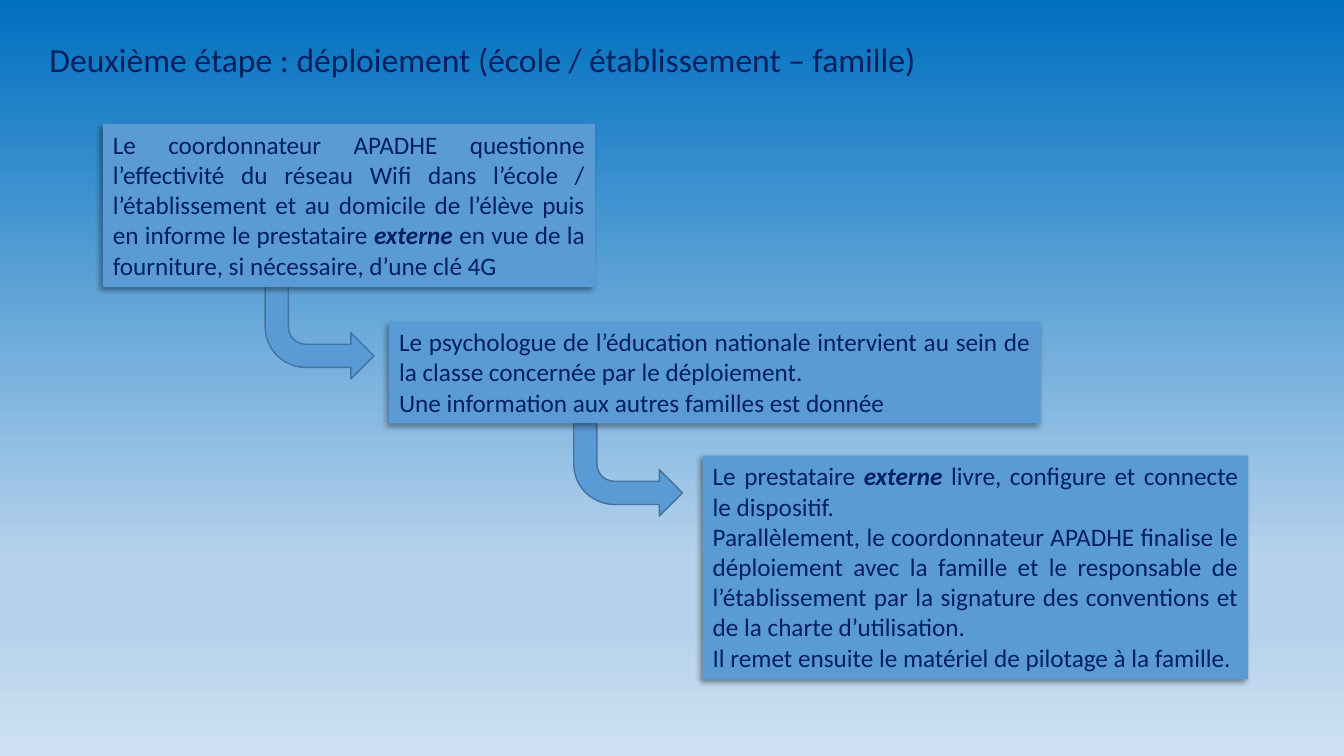
import copy
import lxml.etree
import pptx
import pptx.dml.color
import pptx.enum.shapes
import pptx.enum.text
import pptx.oxml
import pptx.oxml.ns
import pptx.util

Inches = pptx.util.Inches
Pt = pptx.util.Pt
qn = pptx.oxml.ns.qn
NAVY, BLUE, OUTLINE = "002060", "5B9BD5", "43739E"


def color(hex_value):
    return pptx.dml.color.RGBColor.from_string(hex_value)


def outer_shadow(blur, distance, angle, alpha):
    return pptx.oxml.parse_xml(
        '<a:outerShdw xmlns:a="http://schemas.openxmlformats.org/drawingml/2006/main"'
        f' blurRad="{Pt(blur)}" dist="{Pt(distance)}" dir="{angle * 60000}" rotWithShape="0">'
        f'<a:srgbClr val="000000"><a:alpha val="{alpha * 1000}"/></a:srgbClr></a:outerShdw>')


deck = pptx.Presentation()
deck.slide_width, deck.slide_height = Inches(13.33), Inches(7.5)
slide = deck.slides.add_slide(deck.slide_layouts[5])

# Gradient background, top to bottom
sky = slide.background.fill
sky.gradient()
sky.gradient_angle = 270
stops = slide.element.find(".//" + qn("a:gsLst"))
for _ in range(2):
    stops.append(copy.deepcopy(stops[0]))
sky_colors = [(0, "0070C0"), (0.74, "B5D2EC"), (0.83, "B5D2EC"), (1, "CEE1F2")]
for stop, (position, tint) in zip(sky.gradient_stops, sky_colors):
    stop.position = position
    stop.color.rgb = color(tint)

# Title with a soft text shadow
heading = slide.shapes.title
heading.left, heading.top = Inches(0.39), Inches(0.38)
heading.width, heading.height = Inches(10), Inches(0.62)
heading.text_frame.auto_size = pptx.enum.text.MSO_AUTO_SIZE.NONE
heading.text_frame.vertical_anchor = pptx.enum.text.MSO_ANCHOR.TOP
line = heading.text_frame.paragraphs[0]
line.alignment = pptx.enum.text.PP_ALIGN.LEFT
line.line_spacing = 0.9
words = line.add_run()
words.text = "Deuxième étape : déploiement (école / établissement – famille)"
words.font.size = Pt(24)
words.font.name = "Calibri"
words.font.color.rgb = color(NAVY)
text_effects = lxml.etree.Element(qn("a:effectLst"))
text_effects.append(outer_shadow(4, 3, 135, 40))
words.font.fill._xPr.find(qn("a:solidFill")).addnext(text_effects)

# Bent arrows from one step to the next
for left, top in [(2.63, 2.84), (5.69, 4.2)]:
    arrow = slide.shapes.add_shape(pptx.enum.shapes.MSO_SHAPE.BENT_ARROW,
                                   Inches(left), Inches(top), Inches(1.08), Inches(0.92))
    arrow.element.spPr.find(qn("a:xfrm")).set("flipV", "1")
    arrow.shadow.inherit = False
    arrow.fill.solid()
    arrow.fill.fore_color.rgb = color(BLUE)
    arrow.line.color.rgb = color(OUTLINE)
    arrow.line.width = Pt(1)

# Steps: place, then paragraphs of (text, emphasised) runs
steps = [
    ((1.02, 1.23, 4.88, 1.62), [
        [("Le coordonnateur APADHE questionne l’effectivité du réseau Wifi dans l’école / "
          "l’établissement et au domicile de l’élève puis en informe le prestataire ", False),
         ("externe ", True),
         ("en vue de la fourniture, si nécessaire, d’une clé 4G", False)]]),
    ((3.86, 3.19, 6.46, 1.01), [
        [("Le psychologue de l’éducation nationale intervient au sein de la classe "
          "concernée par le déploiement.", False)],
        [("Une information aux autres familles est donnée", False)]]),
    ((6.97, 4.52, 5.41, 2.22), [
        [("Le prestataire ", False), ("externe ", True),
         ("livre, configure et connecte le dispositif.", False)],
        [("Parallèlement, le coordonnateur APADHE finalise le déploiement avec la famille "
          "et le responsable de l’établissement par la signature des conventions et de la "
          "charte d’utilisation.", False)],
        [("Il remet ensuite le matériel de pilotage à la famille.", False)]]),
]
for place, paragraphs in steps:
    step = slide.shapes.add_shape(pptx.enum.shapes.MSO_SHAPE.RECTANGLE,
                                  *[Inches(value) for value in place])
    step.fill.solid()
    step.fill.fore_color.rgb = color(BLUE)
    step.line.fill.background()
    step.shadow.inherit = False
    step.element.spPr.find(qn("a:effectLst")).append(outer_shadow(4, 3, 135, 40))
    frame = step.text_frame
    frame.word_wrap = True
    frame.auto_size = pptx.enum.text.MSO_AUTO_SIZE.SHAPE_TO_FIT_TEXT
    frame.vertical_anchor = pptx.enum.text.MSO_ANCHOR.TOP
    for number, runs in enumerate(paragraphs):
        paragraph = frame.add_paragraph() if number else frame.paragraphs[0]
        paragraph.alignment = pptx.enum.text.PP_ALIGN.JUSTIFY
        for text, emphasised in runs:
            run = paragraph.add_run()
            run.text = text
            run.font.size = Pt(18)
            run.font.name = "Calibri"
            run.font.color.rgb = color(NAVY)
            run.font.bold = run.font.italic = emphasised

deck.save("out.pptx")
